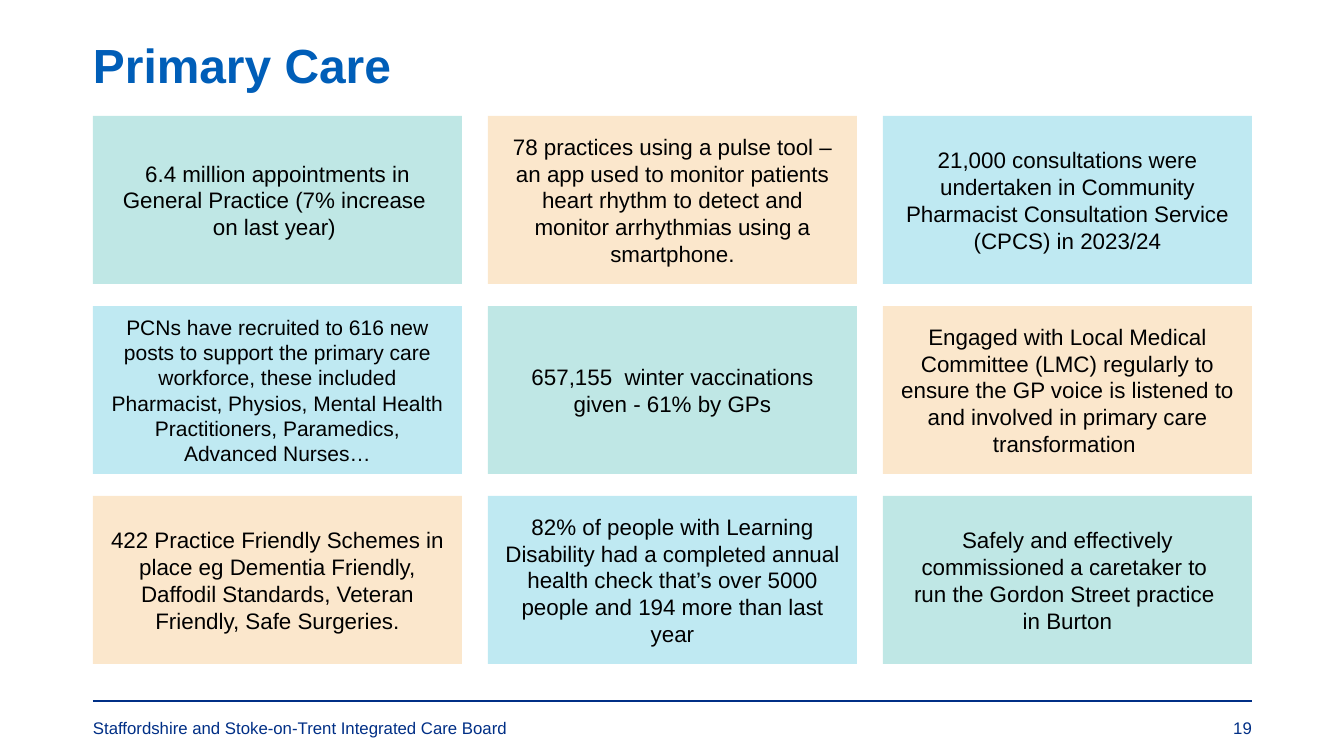
from pptx import Presentation
from pptx.dml.color import RGBColor
from pptx.enum.shapes import MSO_CONNECTOR as CONN, MSO_SHAPE as SHAPE
from pptx.enum.text import MSO_ANCHOR as ANCHOR, MSO_AUTO_SIZE as AUTO, PP_ALIGN as ALIGN
from pptx.oxml.ns import qn
from pptx.util import Emu, Pt
from lxml.etree import SubElement

TITLE = "Primary Care"
FOOTER = "Staffordshire and Stoke-on-Trent Integrated Care Board"
PAGE = "19"
NAVY, BLUE, BLACK = "002F86", "005EB8", "000000"
FILLS = {"teal": ("00A399", 25), "orange": ("EC8A00", 20), "cyan": ("00A8CE", 25)}
TILES = [
    ("teal", 16, "6.4 million appointments in General Practice (7% increase \non last year) "),
    ("orange", 16, "78 practices using a pulse tool – an app used to monitor patients heart "
                   "rhythm to detect and monitor arrhythmias using a smartphone."),
    ("cyan", 16, "21,000 consultations were undertaken in Community Pharmacist "
                 "Consultation Service (CPCS) in 2023/24"),
    ("cyan", 15, "PCNs have recruited to 616 new posts to support the primary care workforce, "
                 "these included Pharmacist, Physios, Mental Health Practitioners, "
                 "Paramedics, Advanced Nurses…"),
    ("teal", 16, "657,155  winter vaccinations given - 61% by GPs"),
    ("orange", 16, "Engaged with Local Medical Committee (LMC) regularly to ensure the GP voice "
                   "is listened to and involved in primary care transformation "),
    ("orange", 16, "422 Practice Friendly Schemes in place eg Dementia Friendly, "
                   "Daffodil Standards, Veteran Friendly, Safe Surgeries."),
    ("cyan", 16, "82% of people with Learning Disability had a completed annual health check "
                 "that’s over 5000 people and 194 more than last year"),
    ("teal", 16, "Safely and effectively commissioned a caretaker to \n"
                 "run the Gordon Street practice \nin Burton"),
]
W, H = 1344, 756
LEFT, RIGHT = 93, 1252
TOP, COLS = 116, 3
TILE_W, TILE_H = 369, 168
STEP_X, STEP_Y = 395, 190
PAD = 16
SCALE = 12192000 / W


def px(*values):
    return [Emu(round(v * SCALE)) for v in values]


def rgb(color):
    return RGBColor.from_string(color)


def write(sp, text, size, color, bold=False, align=ALIGN.LEFT, anchor=ANCHOR.TOP,
          inset=(0, 0, 0, 0), spacing=1.0):
    tf = sp.text_frame
    tf.word_wrap = True
    tf.auto_size = AUTO.NONE
    tf.vertical_anchor = anchor
    tf.margin_left, tf.margin_top, tf.margin_right, tf.margin_bottom = px(*inset)
    p = tf.paragraphs[0]
    p.alignment = align
    p.line_spacing = spacing
    for i, line in enumerate(text.split("\n")):
        if i:
            p.add_line_break()
        r = p.add_run()
        r.text = line
        r.font.name = "Arial"
        r.font.size = Pt(size)
        r.font.bold = bold
        r.font.color.rgb = rgb(color)


def add_tile(s, x, y, fill, size, text):
    color, opacity = FILLS[fill]
    sp = s.shapes.add_shape(SHAPE.RECTANGLE, *px(x, y, TILE_W, TILE_H))
    sp.shadow.inherit = False
    sp.line.fill.background()
    sp.fill.solid()
    sp.fill.fore_color.rgb = rgb(color)
    clr = sp.fill._xPr.find(qn("a:solidFill"))[0]
    SubElement(clr, qn("a:alpha")).set("val", str(opacity * 1000))
    write(sp, text, size, BLACK, align=ALIGN.CENTER, anchor=ANCHOR.MIDDLE, inset=(PAD,) * 4)


def main():
    prs = Presentation()
    prs.slide_width, prs.slide_height = px(W, H)
    s = prs.slides.add_slide(prs.slide_layouts[5])

    title = s.shapes.title
    title.left, title.top, title.width, title.height = px(LEFT, 42, 1114, 43)
    write(title, TITLE, 34.2, BLUE, bold=True, spacing=0.9)

    for i, (fill, size, text) in enumerate(TILES):
        row, col = divmod(i, COLS)
        add_tile(s, LEFT + col * STEP_X, TOP + row * STEP_Y, fill, size, text)

    rule = s.shapes.add_connector(CONN.STRAIGHT, *px(LEFT, 701, RIGHT, 701))
    rule.line.color.rgb = rgb(NAVY)
    rule.line.width = Pt(1)
    SubElement(rule._element.spPr, qn("a:effectLst"))

    footer = s.shapes.add_textbox(*px(LEFT, 713, 806, 30))
    write(footer, FOOTER, 12, NAVY, inset=(0, 5, 10, 5))
    page = s.shapes.add_textbox(*px(RIGHT - 302, 713, 302, 30))
    write(page, PAGE, 12, NAVY, align=ALIGN.RIGHT, inset=(10, 5, 0, 5))

    prs.save("out.pptx")


if __name__ == "__main__":
    main()
